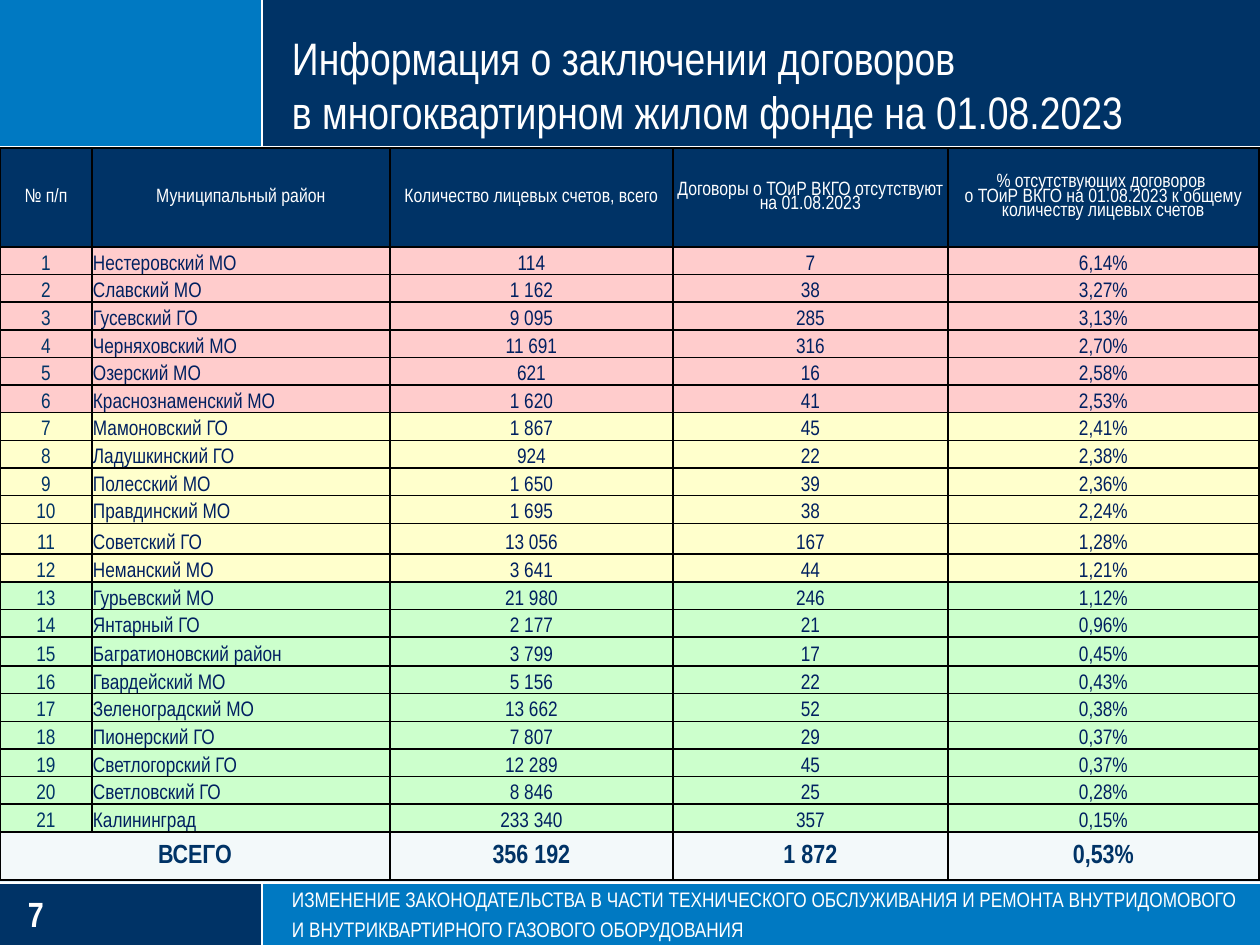
import copy

import pptx
import pptx.dml.color
import pptx.enum.shapes
import pptx.enum.text
import pptx.oxml
import pptx.oxml.ns
import pptx.util

ALIGN = pptx.enum.text.PP_ALIGN
ANCHOR = pptx.enum.text.MSO_ANCHOR
FIT = pptx.enum.text.MSO_AUTO_SIZE
PX = 914400 / 126
COLORS = {
    "navy": "003366", "blue": "0079C2", "white": "FFFFFF", "ink": "002060",
    "red": "FFCCCC", "yellow": "FFFFCC", "green": "CCFFCC", "pale": "F3F9FA",
}
NS = pptx.oxml.ns.nsdecls("a")


def px(*nums):
    """Turn pixels into a list of EMU lengths."""
    return [pptx.util.Emu(round(n * PX)) for n in nums]


def write(frame, text, size=12, color="white", bold=False, align=ALIGN.LEFT,
          anchor=ANCHOR.MIDDLE, space=None):
    frame.word_wrap = True
    frame.vertical_anchor = anchor
    para = frame.paragraphs[0]
    para.text = text
    para.alignment = align
    para.line_spacing = space
    for run in para.runs:
        run.font.name = "Arial Narrow"
        run.font.size = pptx.util.Pt(size)
        run.font.bold = bold
        run.font.color.rgb = pptx.dml.color.RGBColor.from_string(COLORS[color])
    # Line breaks take the format of the text around them
    for mark in para._p.findall(pptx.oxml.ns.qn("a:br")):
        mark.insert(0, copy.deepcopy(para.runs[0]._r.rPr))


deck = pptx.Presentation()
deck.slide_width, deck.slide_height = px(1260, 945)
slide = deck.slides.add_slide(deck.slide_layouts[5])
shapes = slide.shapes

# Header and footer bands
for color, *box in [
    ("blue", 0, 882, 1260, 63),
    ("navy", 0, 883, 261, 62),
    ("blue", 0, 0, 263, 148),
    ("navy", 262, 0, 998, 148),
]:
    band = shapes.add_shape(pptx.enum.shapes.MSO_SHAPE.RECTANGLE, *px(*box))
    band.shadow.inherit = False
    band.fill.solid()
    band.fill.fore_color.rgb = pptx.dml.color.RGBColor.from_string(COLORS[color])
    band.line.fill.background()

for ends in [(0, 147, 1260, 147), (262, 882, 262, 945),
             (0, 883, 1260, 883), (262, 0, 262, 147)]:
    rule = shapes.add_connector(pptx.enum.shapes.MSO_CONNECTOR.STRAIGHT, *px(*ends))
    rule.line.width = pptx.util.Pt(1.25)
    rule.line.color.rgb = pptx.dml.color.RGBColor.from_string(COLORS["white"])
    rule._element.spPr.append(pptx.oxml.parse_xml(f"<a:effectLst {NS}/>"))

# Table
head = [
    "№ п/п", "Муниципальный район", "Количество лицевых счетов, всего",
    "Договоры о ТОиР ВКГО отсутствуют на 01.08.2023",
    "% отсутствующих договоров \nо ТОиР ВКГО на 01.08.2023 к общему количеству лицевых счетов",
]
areas = [
    ("Нестеровский МО", "114", "7", "6,14%"),
    ("Славский МО", "1 162", "38", "3,27%"),
    ("Гусевский ГО", "9 095", "285", "3,13%"),
    ("Черняховский МО", "11 691", "316", "2,70%"),
    ("Озерский МО", "621", "16", "2,58%"),
    ("Краснознаменский МО", "1 620", "41", "2,53%"),
    ("Мамоновский ГО", "1 867", "45", "2,41%"),
    ("Ладушкинский ГО", "924", "22", "2,38%"),
    ("Полесский МО", "1 650", "39", "2,36%"),
    ("Правдинский МО", "1 695", "38", "2,24%"),
    ("Советский ГО", "13 056", "167", "1,28%"),
    ("Неманский МО", "3 641", "44", "1,21%"),
    ("Гурьевский МО", "21 980", "246", "1,12%"),
    ("Янтарный ГО", "2 177", "21", "0,96%"),
    ("Багратионовский район", "3 799", "17", "0,45%"),
    ("Гвардейский МО", "5 156", "22", "0,43%"),
    ("Зеленоградский МО", "13 662", "52", "0,38%"),
    ("Пионерский ГО", "7 807", "29", "0,37%"),
    ("Светлогорский ГО", "12 289", "45", "0,37%"),
    ("Светловский ГО", "8 846", "25", "0,28%"),
    ("Калининград", "233 340", "357", "0,15%"),
]
total = ["ВСЕГО", "", "356 192", "1 872", "0,53%"]
rows = [head] + [[str(n), *area] for n, area in enumerate(areas, 1)] + [total]
last = len(rows) - 1
fills = ["navy"] + ["red"] * 6 + ["yellow"] * 6 + ["green"] * 9 + ["pale"]

widths = [92, 298, 283, 275, 311]
tall = {0: 99, 11: 31, 15: 29, last: 48}
full = 732
even = (full - sum(tall.values())) / (len(rows) - len(tall))

table = shapes.add_table(len(rows), len(widths), *px(0, 148, sum(widths), full)).table
table.first_row = table.horz_banding = False
for col, width in zip(table.columns, px(*widths)):
    col.width = width
table.cell(last, 0).merge(table.cell(last, 1))

for r, row in enumerate(rows):
    table.rows[r].height = px(tall.get(r, even))[0]
    for c, text in enumerate(row):
        cell = table.cell(r, c)
        cell.margin_left, cell.margin_right, cell.margin_top, cell.margin_bottom = px(1, 1, 1, 0)
        for side in "LRTB":
            cell._tc.get_or_add_tcPr().append(pptx.oxml.parse_xml(
                f'<a:ln{side} {NS} w="12700"><a:solidFill><a:srgbClr val="000000"/>'
                f'</a:solidFill></a:ln{side}>'))
        cell.fill.solid()
        cell.fill.fore_color.rgb = pptx.dml.color.RGBColor.from_string(COLORS[fills[r]])
        if r == 0:
            look = {"size": 11, "space": 0.8}
        elif r == last:
            look = {"size": 15, "color": "navy", "bold": True}
        else:
            look = {"color": "ink" if c else "navy"}
        inner = 0 < r < last
        cell.vertical_anchor = ANCHOR.BOTTOM if inner else ANCHOR.MIDDLE
        if text:
            write(cell.text_frame, text, anchor=cell.vertical_anchor,
                  align=ALIGN.LEFT if inner and c == 1 else ALIGN.CENTER, **look)

# Title, page number and footer text
title = shapes.title
title.left, title.top, title.width, title.height = px(292, 0, 936, 139)
title.element.getparent().append(title.element)
page = shapes.add_textbox(*px(28, 892, 205, 43))
foot = shapes.add_textbox(*px(292, 883, 958, 57))
for box in (title, page, foot):
    frame = box.text_frame
    frame.margin_left = frame.margin_right = frame.margin_top = frame.margin_bottom = 0
    frame.auto_size = FIT.NONE if box is title else FIT.SHAPE_TO_FIT_TEXT

write(title.text_frame,
      "Информация о заключении договоров \nв многоквартирном жилом фонде на 01.08.2023",
      size=26, anchor=ANCHOR.BOTTOM)
write(page.text_frame, "7", size=20, bold=True)
write(foot.text_frame,
      "ИЗМЕНЕНИЕ ЗАКОНОДАТЕЛЬСТВА В ЧАСТИ ТЕХНИЧЕСКОГО ОБСЛУЖИВАНИЯ И РЕМОНТА "
      "ВНУТРИДОМОВОГО И ВНУТРИКВАРТИРНОГО ГАЗОВОГО ОБОРУДОВАНИЯ",
      space=pptx.util.Pt(17))

deck.save("out.pptx")
